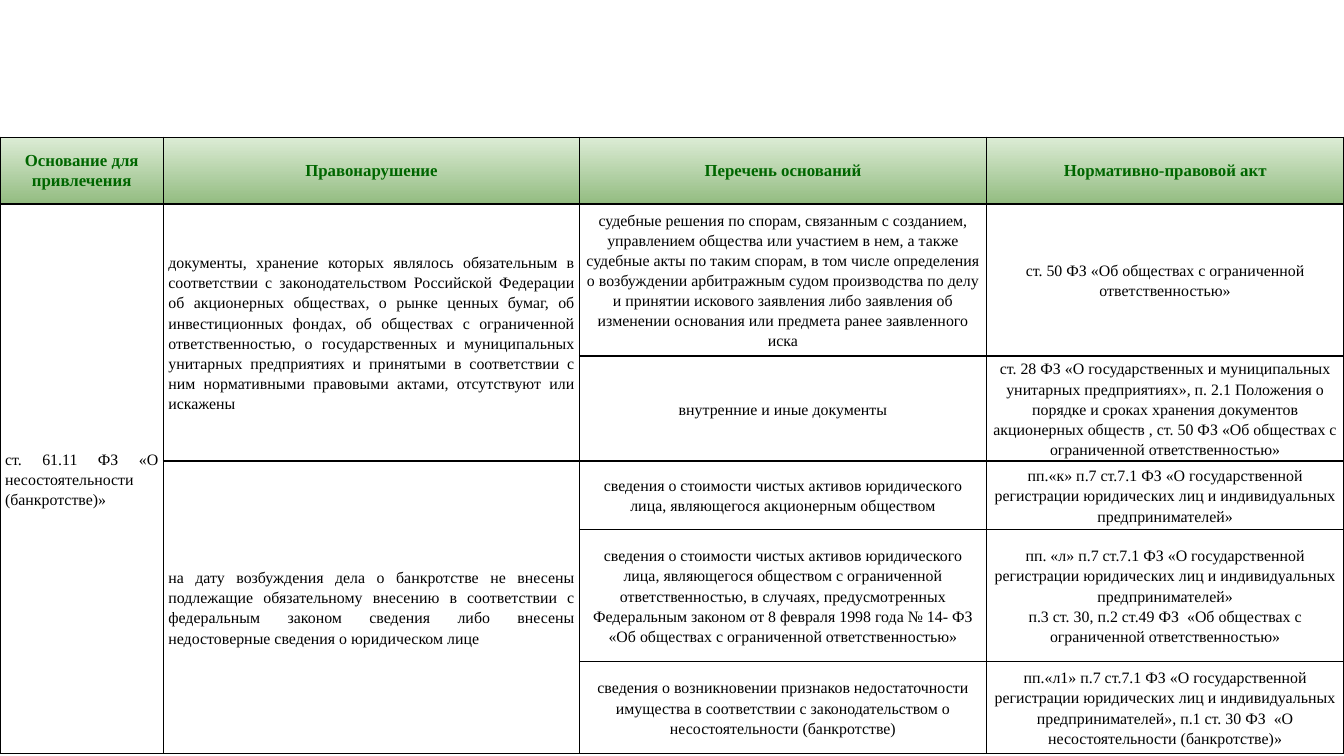
from dataclasses import dataclass

from lxml import etree
from pptx import Presentation
from pptx.dml.color import RGBColor
from pptx.enum.text import MSO_ANCHOR, PP_ALIGN
from pptx.oxml.ns import qn
from pptx.table import Table, _Cell
from pptx.util import Pt

CENTER = PP_ALIGN.CENTER
JUSTIFY = PP_ALIGN.JUSTIFY
MIDDLE = MSO_ANCHOR.MIDDLE

FONT = "Times New Roman"
BLACK = "000000"
GREEN = "006600"
HEADER_GRADIENT = ("DCECD5", "93BC81")
BORDER_WIDTH = 0.75
TABLE_TOP = 73.5
COLUMN_WIDTHS = (87.5, 223, 218, 191.5)
ROW_HEIGHTS = (34, 81.5, 56.2, 36.8, 70.5, 49.5)


@dataclass(frozen=True)
class CellStyle:
    size: float
    color: str
    bold: bool
    spacing: float
    margin_x: float
    margin_y: float


@dataclass(frozen=True)
class Entry:
    row: int
    column: int
    text: str
    row_span: int = 1
    align: PP_ALIGN = CENTER


HEADER_STYLE = CellStyle(9, GREEN, True, 1.07, 7.2, 7.2)
BODY_STYLE = CellStyle(8.5, BLACK, False, 1.15, 2.7, 0)

HEADERS = (
    "Основание для привлечения",
    "Правонарушение",
    "Перечень оснований",
    "Нормативно-правовой акт",
)

ENTRIES = (
    Entry(1, 0, "ст. 61.11 ФЗ «О несостоятельности (банкротстве)»", 5, JUSTIFY),
    Entry(1, 1, "документы, хранение которых являлось обязательным в соответствии с "
          "законодательством Российской Федерации об акционерных обществах, о рынке "
          "ценных бумаг, об инвестиционных фондах, об обществах с ограниченной "
          "ответственностью, о государственных и муниципальных унитарных предприятиях "
          "и принятыми в соответствии с ним нормативными правовыми актами, "
          "отсутствуют или искажены", 2, JUSTIFY),
    Entry(1, 2, "судебные решения по спорам, связанным с созданием, управлением общества "
          "или участием в нем, а также судебные акты по таким спорам, в том числе "
          "определения о возбуждении арбитражным судом производства по делу и принятии "
          "искового заявления либо заявления об изменении основания или предмета ранее "
          "заявленного иска"),
    Entry(1, 3, "ст. 50 ФЗ «Об обществах с ограниченной ответственностью»"),
    Entry(2, 2, "внутренние и иные документы"),
    Entry(2, 3, "ст. 28 ФЗ «О государственных и муниципальных унитарных предприятиях», "
          "п. 2.1 Положения о порядке и сроках хранения документов акционерных обществ , "
          "ст. 50 ФЗ «Об обществах с ограниченной ответственностью»"),
    Entry(3, 1, "на дату возбуждения дела о банкротстве не внесены подлежащие "
          "обязательному внесению в соответствии с федеральным законом сведения либо "
          "внесены недостоверные сведения о юридическом лице", 3, JUSTIFY),
    Entry(3, 2, "сведения о стоимости чистых активов юридического лица, являющегося "
          "акционерным обществом"),
    Entry(3, 3, "пп.«к» п.7 ст.7.1 ФЗ «О государственной регистрации юридических лиц и "
          "индивидуальных предпринимателей»"),
    Entry(4, 2, "сведения о стоимости чистых активов юридического лица, являющегося "
          "обществом с ограниченной ответственностью, в случаях, предусмотренных "
          "Федеральным законом от 8 февраля 1998 года № 14- ФЗ «Об обществах с "
          "ограниченной ответственностью»"),
    Entry(4, 3, "пп. «л» п.7 ст.7.1 ФЗ «О государственной регистрации юридических лиц и "
          "индивидуальных предпринимателей»\n"
          "п.3 ст. 30, п.2 ст.49 ФЗ  «Об обществах с ограниченной ответственностью»"),
    Entry(5, 2, "сведения о возникновении признаков недостаточности имущества в "
          "соответствии с законодательством о несостоятельности (банкротстве)"),
    Entry(5, 3, "пп.«л1» п.7 ст.7.1 ФЗ «О государственной регистрации юридических лиц и "
          "индивидуальных предпринимателей», п.1 ст. 30 ФЗ  «О несостоятельности "
          "(банкротстве)»"),
)


def rgb(value: str) -> RGBColor:
    return RGBColor.from_string(value)


def add_borders(cell: _Cell) -> None:
    properties = cell._tc.get_or_add_tcPr()
    for side in ("a:lnL", "a:lnR", "a:lnT", "a:lnB"):
        line = etree.SubElement(properties, qn(side), w=str(Pt(BORDER_WIDTH)))
        fill = etree.SubElement(line, qn("a:solidFill"))
        etree.SubElement(fill, qn("a:srgbClr"), val=BLACK)


def fill_header(cell: _Cell) -> None:
    cell.fill.gradient()
    cell.fill.gradient_angle = 270
    for position, (stop, color) in enumerate(zip(cell.fill.gradient_stops, HEADER_GRADIENT)):
        stop.position = position
        stop.color.rgb = rgb(color)


def write_cell(table: Table, entry: Entry, style: CellStyle) -> None:
    cell = table.cell(entry.row, entry.column)
    if entry.row_span > 1:
        cell.merge(table.cell(entry.row + entry.row_span - 1, entry.column))
    cell.vertical_anchor = MIDDLE
    cell.margin_left = cell.margin_right = Pt(style.margin_x)
    cell.margin_top = cell.margin_bottom = Pt(style.margin_y)
    cell.text_frame.text = entry.text
    for paragraph in cell.text_frame.paragraphs:
        paragraph.alignment = entry.align
        paragraph.line_spacing = style.spacing
        for span in paragraph.runs:
            span.font.name = FONT
            span.font.size = Pt(style.size)
            span.font.bold = style.bold
            span.font.color.rgb = rgb(style.color)


def main() -> None:
    deck = Presentation()
    deck.slide_width, deck.slide_height = Pt(720), Pt(405)
    page = deck.slides.add_slide(deck.slide_layouts[6])
    table = page.shapes.add_table(
        len(ROW_HEIGHTS), len(COLUMN_WIDTHS), Pt(0), Pt(TABLE_TOP),
        Pt(sum(COLUMN_WIDTHS)), Pt(sum(ROW_HEIGHTS)),
    ).table
    table.first_row = table.horz_banding = False
    for column, width in zip(table.columns, COLUMN_WIDTHS):
        column.width = Pt(width)
    for row, height in zip(table.rows, ROW_HEIGHTS):
        row.height = Pt(height)
    for cell in table.iter_cells():
        add_borders(cell)
        cell.fill.background()
        cell.margin_top = cell.margin_bottom = Pt(0)
    for column, heading in enumerate(HEADERS):
        write_cell(table, Entry(0, column, heading), HEADER_STYLE)
        fill_header(table.cell(0, column))
    for entry in ENTRIES:
        write_cell(table, entry, BODY_STYLE)
    deck.save("out.pptx")


if __name__ == "__main__":
    main()
